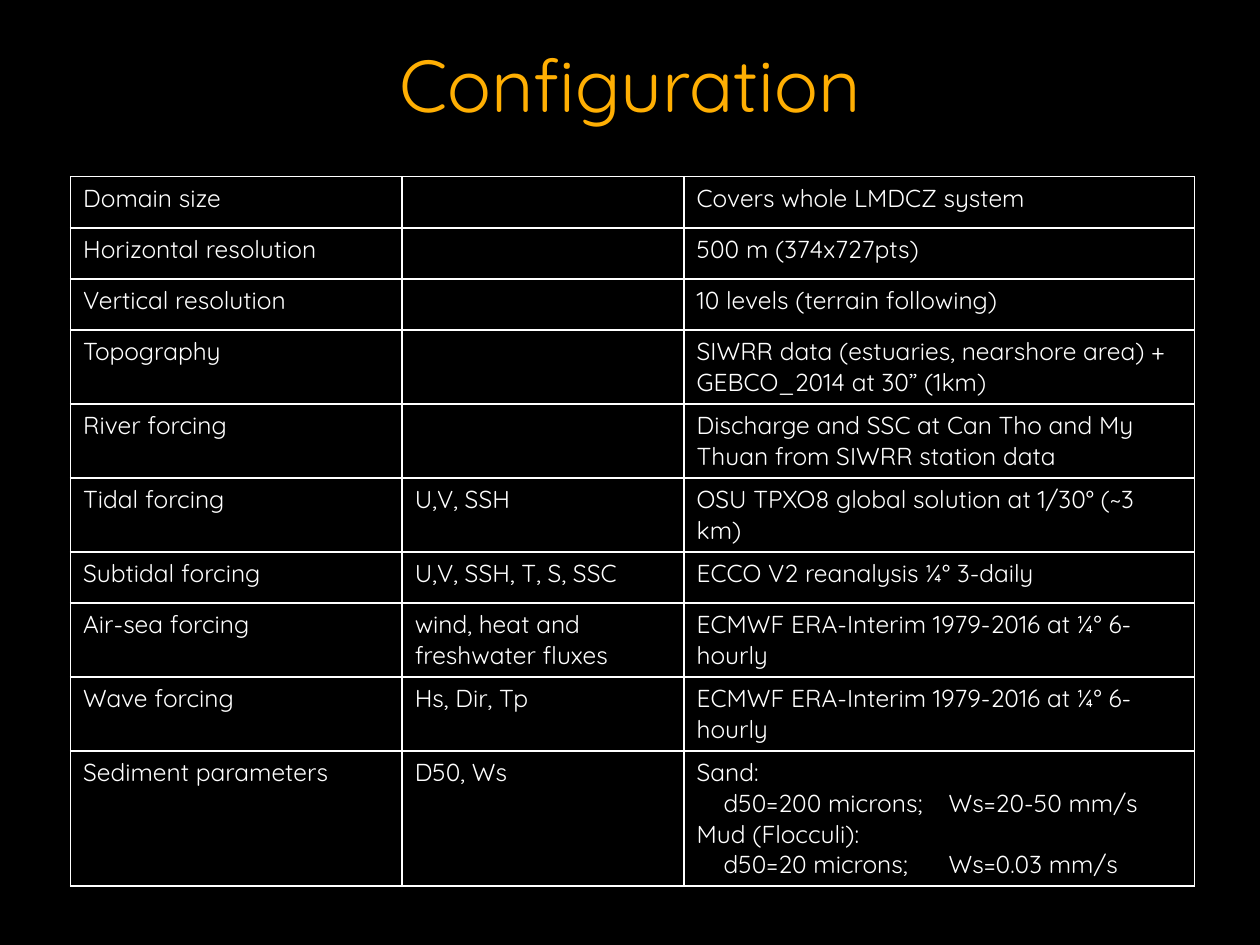
from lxml.etree import SubElement
from pptx import Presentation
from pptx.dml.color import RGBColor
from pptx.enum.text import MSO_ANCHOR, PP_ALIGN
from pptx.oxml import parse_xml
from pptx.oxml.ns import nsdecls, qn
from pptx.util import Pt

BLACK = RGBColor(0x00, 0x00, 0x00)
WHITE = RGBColor(0xFF, 0xFF, 0xFF)
GOLD = RGBColor(0xFF, 0xAF, 0x03)
FONT = "Quicksand"
WIDTHS = [189.5, 161.1, 291.6]
HEIGHT = 29.2
STOPS = [15.4, 144]
ERA = "ECMWF ERA-Interim 1979-2016 at ¼° 6-hourly"
ROWS = [
    ("Domain size", "", "Covers whole LMDCZ system"),
    ("Horizontal resolution", "", "500 m (374x727pts)"),
    ("Vertical resolution", "", "10 levels (terrain following)"),
    ("Topography", "",
     "SIWRR data (estuaries, nearshore area) + GEBCO_2014 at 30” (1km)"),
    ("River forcing", "",
     "Discharge and SSC at Can Tho and My Thuan from SIWRR station data"),
    ("Tidal forcing", "U,V, SSH", "OSU TPXO8 global solution at 1/30° (~3 km)"),
    ("Subtidal forcing", "U,V, SSH, T, S, SSC", "ECCO V2 reanalysis ¼° 3-daily"),
    ("Air-sea forcing", "wind, heat and freshwater fluxes", ERA),
    ("Wave forcing", "Hs, Dir, Tp", ERA),
    ("Sediment parameters", "D50, Ws",
     "Sand:\n\td50=200 microns;\tWs=20-50 mm/s\n"
     "Mud (Flocculi):\n\td50=20 microns;\tWs=0.03 mm/s"),
]


def style(para, size, color):
    for run in para.runs:
        run.font.name = FONT
        run.font.size = Pt(size)
        run.font.color.rgb = color


def border(cell):
    props = cell._tc.get_or_add_tcPr()
    for i, side in enumerate("LRTB"):
        props.insert(i, parse_xml(
            f'<a:ln{side} {nsdecls("a")} w="{Pt(1)}"><a:solidFill>'
            f'<a:srgbClr val="{WHITE}"/></a:solidFill></a:ln{side}>'))


prs = Presentation()
prs.slide_width, prs.slide_height = Pt(720), Pt(540)
slide = prs.slides.add_slide(prs.slide_layouts[5])
slide.background.fill.solid()
slide.background.fill.fore_color.rgb = BLACK

title = slide.shapes.title
title.left, title.top = Pt(48), Pt(16.6)
title.width, title.height = Pt(624), Pt(62)
frame = title.text_frame
frame.text = "Configuration"
frame.vertical_anchor = MSO_ANCHOR.MIDDLE
frame.paragraphs[0].alignment = PP_ALIGN.CENTER
style(frame.paragraphs[0], 42, GOLD)

table = slide.shapes.add_table(
    len(ROWS), len(WIDTHS), Pt(40.3), Pt(101),
    Pt(sum(WIDTHS)), Pt(HEIGHT * len(ROWS))).table
table.first_row = table.horz_banding = False
for col, width in zip(table.columns, WIDTHS):
    col.width = Pt(width)
for row, texts in zip(table.rows, ROWS):
    row.height = Pt(HEIGHT)
    for cell, text in zip(row.cells, texts):
        cell.fill.background()
        border(cell)
        cell.text_frame.text = text
        for para in cell.text_frame.paragraphs:
            if "\t" in para.text:
                tabs = SubElement(para._p.get_or_add_pPr(), qn("a:tabLst"))
                for stop in STOPS:
                    SubElement(tabs, qn("a:tab"), pos=str(Pt(stop)), algn="l")
            style(para, 14, WHITE)

prs.save("out.pptx")
